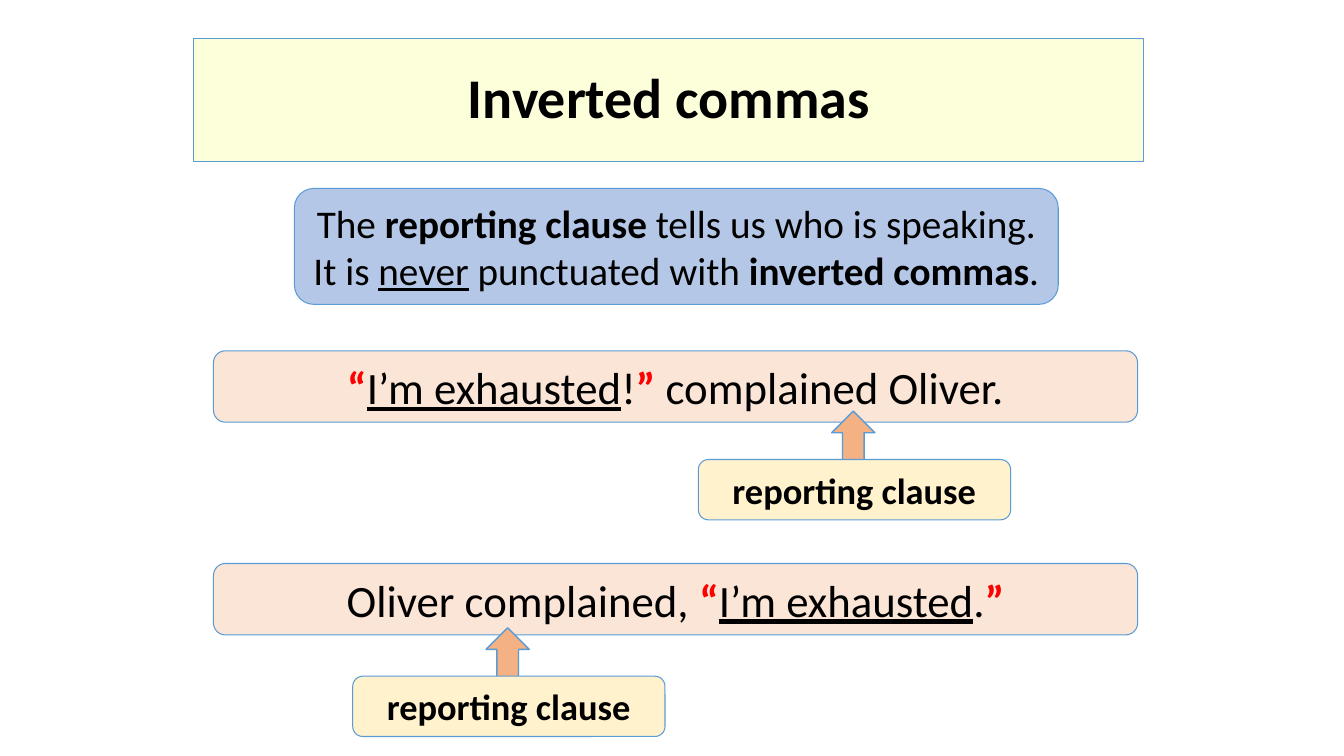
from pptx import Presentation
from pptx.dml.color import RGBColor
from pptx.enum.shapes import MSO_SHAPE
from pptx.enum.text import MSO_ANCHOR, PP_ALIGN
from pptx.util import Cm, Pt

RECT = MSO_SHAPE.RECTANGLE
ROUNDED = MSO_SHAPE.ROUNDED_RECTANGLE
UP_ARROW = MSO_SHAPE.UP_ARROW
MIDDLE = MSO_ANCHOR.MIDDLE
CENTER = PP_ALIGN.CENTER


def color(value):
    return RGBColor.from_string(value)


def add_run(p, text, size=32, fill="000000", bold=False, underline=False):
    r = p.add_run()
    r.text = text
    r.font.name = "Calibri"
    r.font.size = Pt(size)
    r.font.color.rgb = color(fill)
    r.font.bold = bold
    r.font.underline = underline


class Lesson:
    outline = "5B9BD5"
    quote = {"fill": "FF0000", "bold": True}
    bold = {"bold": True}
    underline = {"underline": True}

    def __init__(self, prs):
        self.s = prs.slides.add_slide(prs.slide_layouts[6])

    def shape(self, kind, left, top, width, height, fill, line=0.75):
        sp = self.s.shapes.add_shape(kind, Cm(left), Cm(top), Cm(width), Cm(height))
        sp.shadow.inherit = False
        sp.fill.solid()
        sp.fill.fore_color.rgb = color(fill)
        sp.line.color.rgb = color(self.outline)
        sp.line.width = Pt(line)
        return sp

    def box(self, kind, left, top, width, height, fill, size, runs):
        sp = self.shape(kind, left, top, width, height, fill)
        tf = sp.text_frame
        tf.word_wrap = True
        tf.vertical_anchor = MIDDLE
        p = tf.paragraphs[0]
        p.alignment = CENTER
        for text, style in runs:
            add_run(p, text, size=size, **style)
        return p

    def title(self, text):
        p = self.box(RECT, 4.88, 0.97, 23.95, 3.1, "FDFEDA", 40, [(text, self.bold)])
        p.line_spacing = 0.9

    def rule(self, runs):
        self.box(ROUNDED, 7.42, 4.75, 19.25, 2.92, "B4C7E7", 28, runs)

    def sentence(self, top, runs):
        self.box(ROUNDED, 5.38, top, 23.29, 1.8, "FBE5D6", 32, runs)

    def label(self, left, top, text):
        self.shape(UP_ARROW, left + 3.36, top - 1.22, 1.09, 1.24, "F4B183", line=1)
        self.box(ROUNDED, left, top, 7.87, 1.52, "FFF2CC", 26, [(text, self.bold)])


def main():
    prs = Presentation()
    prs.slide_width = Cm(33.87)
    prs.slide_height = Cm(19.05)
    lesson = Lesson(prs)
    bold, underline, quote = lesson.bold, lesson.underline, lesson.quote

    lesson.title("Inverted commas")
    lesson.rule([
        ("The ", {}),
        ("reporting clause ", bold),
        ("tells us who is speaking. It is ", {}),
        ("never", underline),
        (" punctuated with ", {}),
        ("inverted commas", bold),
        (".", {}),
    ])
    lesson.sentence(8.84, [
        ("“", quote),
        ("I’m exhausted", underline),
        ("!", {}),
        ("”", quote),
        (" complained Oliver.", {}),
    ])
    lesson.sentence(14.2, [
        ("Oliver complained, ", {}),
        ("“", quote),
        ("I’m exhausted", underline),
        (".", {}),
        ("”", quote),
    ])
    for left, top in ((17.6, 11.58), (8.89, 17.04)):
        lesson.label(left, top, "reporting clause")

    prs.save("out.pptx")


if __name__ == "__main__":
    main()
